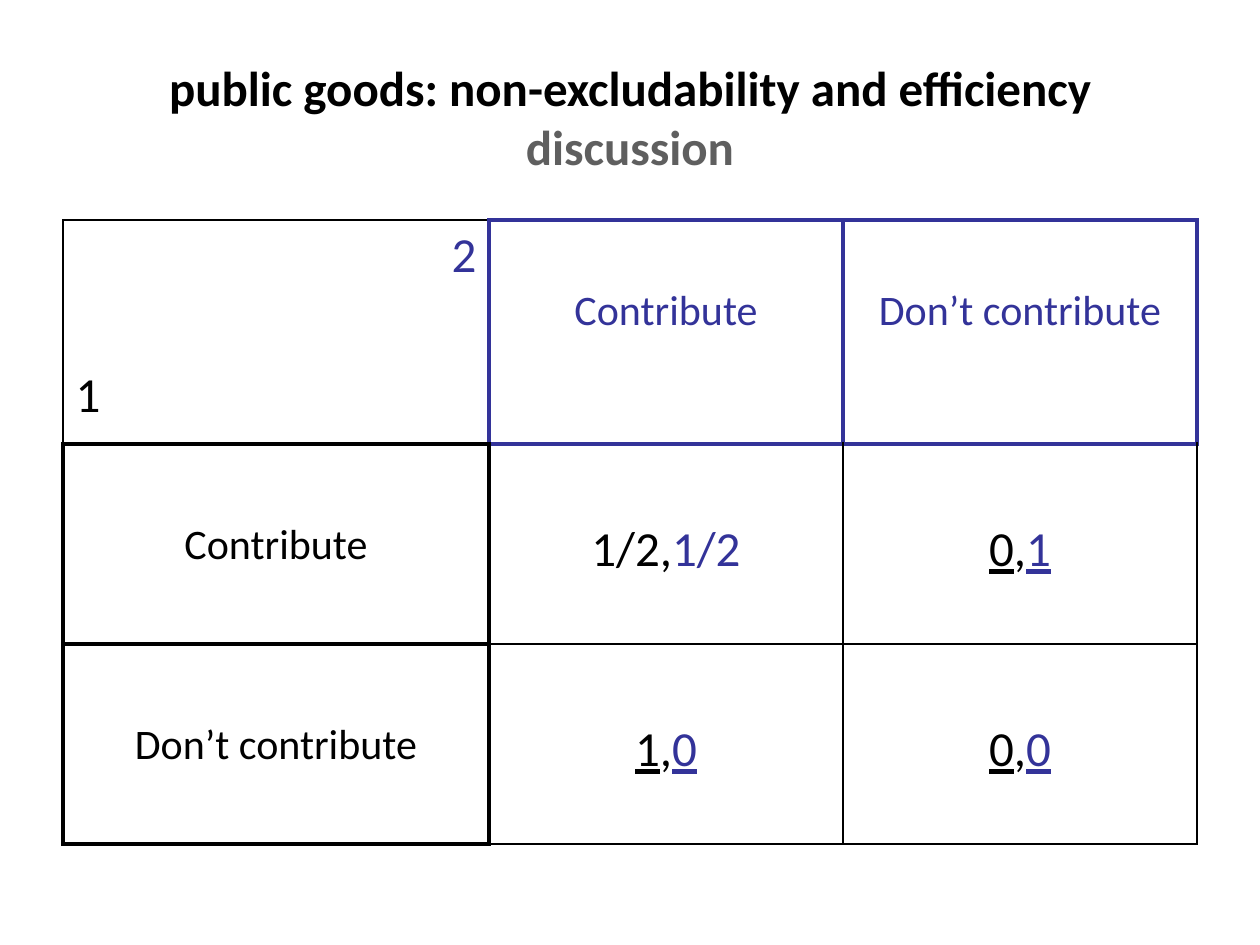
from lxml.etree import SubElement
from pptx import Presentation
from pptx.dml.color import RGBColor
from pptx.enum.text import MSO_ANCHOR as Anchor, PP_ALIGN as Align
from pptx.oxml.ns import qn
from pptx.util import Pt

EMU_PER_PX = 914400 // 126
BLACK, BLUE, GREY = "000000", "333399", "5F5F5F"
THIN, THICK = (BLACK, 1), (BLACK, 2.25)
BLUE_THICK = (BLUE, 2.25)


def px(length):
    return length * EMU_PER_PX


def color(hex_code):
    return RGBColor.from_string(hex_code)


class GameSlide:
    """Holds the text style and the current slide, and adds its elements."""

    font_name = "Calibri"

    def __init__(self, deck):
        self.slide = deck.slides.add_slide(deck.slide_layouts[6])

    def run(self, paragraph, text, hex_code=BLACK, size=28, **extra):
        run = paragraph.add_run()
        run.text = text
        font_format = {"name": self.font_name, "size": Pt(size), **extra}
        for key, value in font_format.items():
            setattr(run.font, key, value)
        run.font.color.rgb = color(hex_code)

    def title(self, left, top, width, height, lines):
        frame = self.slide.shapes.add_textbox(
            px(left), px(top), px(width), px(height)).text_frame
        frame.word_wrap = True
        frame.vertical_anchor = Anchor.MIDDLE
        heading = frame.paragraphs[0]
        heading.alignment = Align.CENTER
        for index, (text, hex_code) in enumerate(lines):
            if index:
                heading.add_line_break()
            self.run(heading, text, hex_code, bold=True)

    def table(self, left, top, widths, heights):
        table = self.slide.shapes.add_table(
            len(heights), len(widths), px(left), px(top),
            px(sum(widths)), px(sum(heights))).table
        table.first_row = table.horz_banding = False
        for column, width in zip(table.columns, widths):
            column.width = px(width)
        for row, height in zip(table.rows, heights):
            row.height = px(height)
        return table

    def borders(self, cell, left, right, top, bottom):
        properties = cell._tc.get_or_add_tcPr()
        for side, (hex_code, points) in zip("LRTB", (left, right, top, bottom)):
            line = SubElement(properties, qn(f"a:ln{side}"), w=str(Pt(points)))
            fill = SubElement(line, qn("a:solidFill"))
            SubElement(fill, qn("a:srgbClr"), val=hex_code)
        cell.fill.background()

    def cell(self, cell, runs, margin_top, edges):
        self.borders(cell, *edges)
        cell.margin_top = px(margin_top)
        paragraph = cell.text_frame.paragraphs[0]
        paragraph.alignment = Align.CENTER
        for text, font_format in runs:
            self.run(paragraph, text, **font_format)

    def corner(self, cell, row_player, column_player):
        self.borders(cell, THIN, BLUE_THICK, THIN, THICK)
        upper = cell.text_frame.paragraphs[0]
        upper.alignment = Align.RIGHT
        self.run(upper, column_player, BLUE)
        lower = cell.text_frame.add_paragraph()
        lower.alignment = Align.LEFT
        lower.space_before = Pt(45.5)
        self.run(lower, row_player)


def main():
    deck = Presentation()
    deck.slide_width, deck.slide_height = px(1260), px(945)
    game = GameSlide(deck)
    game.title(63, 38, 1134, 157, [
        ("public goods: non-excludability and efficiency", BLACK),
        ("discussion", GREY)])

    strategies = ["Contribute", "Don’t contribute"]
    payoffs = [[("1/2", "1/2", False), ("0", "1", True)],
               [("1", "0", True), ("0", "0", True)]]
    matrix = game.table(63, 220, [426, 354, 354], [224, 200, 200])
    game.corner(matrix.cell(0, 0), "1", "2")
    for i, strategy in enumerate(strategies, 1):
        game.cell(matrix.cell(0, i), [(strategy, {"hex_code": BLUE, "size": 24})],
                  66, [BLUE_THICK] * 4)
        game.cell(matrix.cell(i, 0), [(strategy, {"size": 24})], 76, [THICK] * 4)
    for i, payoff_row in enumerate(payoffs, 1):
        for j, (first, second, best) in enumerate(payoff_row, 1):
            runs = [(first, {"underline": best}), (",", {}),
                    (second, {"hex_code": BLUE, "underline": best})]
            edges = (THICK if j == 1 else THIN, THIN,
                     BLUE_THICK if i == 1 else THIN, THIN)
            game.cell(matrix.cell(i, j), runs, 76, edges)
    deck.save("out.pptx")


if __name__ == "__main__":
    main()
